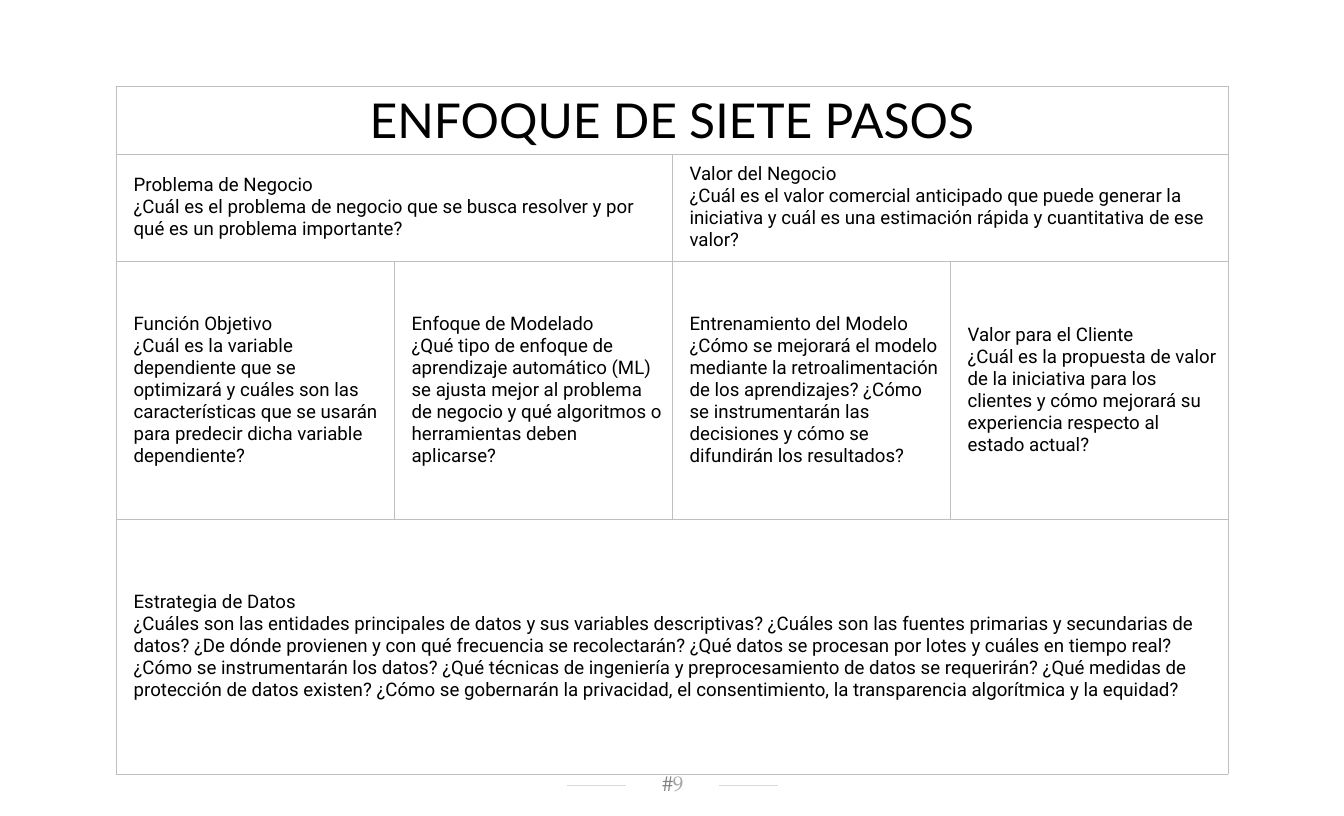
from typing import Any, NamedTuple

from lxml.etree import SubElement
from pptx import Presentation
from pptx.dml.color import RGBColor
from pptx.enum.shapes import MSO_CONNECTOR as Link
from pptx.enum.text import MSO_ANCHOR as Anchor, PP_ALIGN as Align
from pptx.oxml import parse_xml
from pptx.oxml.ns import nsdecls, qn
from pptx.util import Pt

PX = 9525
BLACK = RGBColor(0x00, 0x00, 0x00)
DARK = RGBColor(0x80, 0x80, 0x80)
PALE = RGBColor(0xA6, 0xA6, 0xA6)
RULE = RGBColor(0xD9, 0xD9, 0xD9)
EDGE = RGBColor(0xBF, 0xBF, 0xBF)

HEAD = {"name": "Lato", "size": Pt(36)}
BODY = {"name": "Roboto", "size": Pt(14)}
PAGE = {"name": "TeX Gyre Pagella", "size": Pt(16)}

LEFT, TOP, COL = 116, 86, 278
ROWS = (68, 107, 258, 255)
INDENT = 8


class Step(NamedTuple):
    row: int
    col: int
    span: int
    name: str
    ask: str


STEPS = (
    Step(1, 0, 2, "Problema de Negocio",
         "¿Cuál es el problema de negocio que se busca resolver y por qué es un "
         "problema importante?"),
    Step(1, 2, 2, "Valor del Negocio",
         "¿Cuál es el valor comercial anticipado que puede generar la iniciativa "
         "y cuál es una estimación rápida y cuantitativa de ese valor?"),
    Step(2, 0, 1, "Función Objetivo",
         "¿Cuál es la variable dependiente que se optimizará y cuáles son las "
         "características que se usarán para predecir dicha variable dependiente?"),
    Step(2, 1, 1, "Enfoque de Modelado",
         "¿Qué tipo de enfoque de aprendizaje automático (ML) se ajusta mejor al "
         "problema de negocio y qué algoritmos o herramientas deben aplicarse?"),
    Step(2, 2, 1, "Entrenamiento del Modelo",
         "¿Cómo se mejorará el modelo mediante la retroalimentación de los "
         "aprendizajes? ¿Cómo se instrumentarán las decisiones y cómo se "
         "difundirán los resultados?"),
    Step(2, 3, 1, "Valor para el Cliente",
         "¿Cuál es la propuesta de valor de la iniciativa para los clientes y "
         "cómo mejorará su experiencia respecto al estado actual?"),
    Step(3, 0, 4, "Estrategia de Datos",
         "¿Cuáles son las entidades principales de datos y sus variables "
         "descriptivas? ¿Cuáles son las fuentes primarias y secundarias de datos? "
         "¿De dónde provienen y con qué frecuencia se recolectarán? ¿Qué datos se "
         "procesan por lotes y cuáles en tiempo real? ¿Cómo se instrumentarán los "
         "datos? ¿Qué técnicas de ingeniería y preprocesamiento de datos se "
         "requerirán? ¿Qué medidas de protección de datos existen? ¿Cómo se "
         "gobernarán la privacidad, el consentimiento, la transparencia "
         "algorítmica y la equidad?"),
)


def add_run(para: Any, text: str, style: dict[str, Any], color: RGBColor) -> None:
    run = para.add_run()
    run.text = text
    for key, value in style.items():
        setattr(run.font, key, value)
    run.font.color.rgb = color


def set_edges(cell: Any) -> None:
    """Clear the cell's fill and give it a thin line on all four sides."""
    cell.fill.background()
    props = cell._tc.get_or_add_tcPr()
    for spot, side in enumerate("LRTB"):
        props.insert(spot, parse_xml(
            f'<a:ln{side} {nsdecls("a")} w="{Pt(0.5)}"><a:solidFill>'
            f'<a:srgbClr val="{EDGE}"/></a:solidFill></a:ln{side}>'))


def add_grid(slide: Any) -> Any:
    frame = slide.shapes.add_table(len(ROWS), 4, LEFT * PX, TOP * PX,
                                   4 * COL * PX, sum(ROWS) * PX)
    grid = frame.table
    grid.first_row = grid.horz_banding = False
    for col in grid.columns:
        col.width = COL * PX
    for row, high in zip(grid.rows, ROWS):
        row.height = high * PX
    for cell in grid.iter_cells():
        set_edges(cell)
        cell.vertical_anchor = Anchor.MIDDLE
    return grid


def add_title(grid: Any, text: str) -> None:
    cell = grid.cell(0, 0)
    cell.merge(grid.cell(0, 3))
    para = cell.text_frame.paragraphs[0]
    para.alignment = Align.CENTER
    add_run(para, text, HEAD, BLACK)


def add_step(grid: Any, step: Step) -> None:
    cell = grid.cell(step.row, step.col)
    if step.span > 1:
        cell.merge(grid.cell(step.row, step.col + step.span - 1))
    frame = cell.text_frame
    for para, text in ((frame.paragraphs[0], step.name),
                       (frame.add_paragraph(), step.ask)):
        para._p.get_or_add_pPr().set("marL", str(INDENT * PX))
        add_run(para, text, BODY, BLACK)


def add_rule(slide: Any, start: int, end: int, y: int) -> None:
    line = slide.shapes.add_connector(Link.STRAIGHT, start * PX, y * PX,
                                      end * PX, y * PX)
    line.line.color.rgb = RULE
    line.line.width = Pt(0.75)
    SubElement(line._element.spPr, qn("a:effectLst"))


def add_page(slide: Any) -> None:
    for start, end in ((567, 626), (719, 778)):
        add_rule(slide, start, end, 786)
    box = slide.shapes.add_textbox(625 * PX, 772 * PX, 94 * PX, 25 * PX)
    form = {"word_wrap": True, "vertical_anchor": Anchor.MIDDLE,
            "margin_left": 12 * PX, "margin_top": 2 * PX,
            "margin_right": 10 * PX, "margin_bottom": 5 * PX}
    for key, value in form.items():
        setattr(box.text_frame, key, value)
    para = box.text_frame.paragraphs[0]
    para.alignment = Align.CENTER
    add_run(para, "#", PAGE, DARK)
    add_run(para, "9", PAGE, PALE)


def main() -> None:
    deck = Presentation()
    deck.slide_width, deck.slide_height = 1344 * PX, 816 * PX
    slide = deck.slides.add_slide(deck.slide_layouts[6])
    add_page(slide)
    grid = add_grid(slide)
    add_title(grid, "ENFOQUE DE SIETE PASOS")
    for step in STEPS:
        add_step(grid, step)
    deck.save("out.pptx")


if __name__ == "__main__":
    main()
